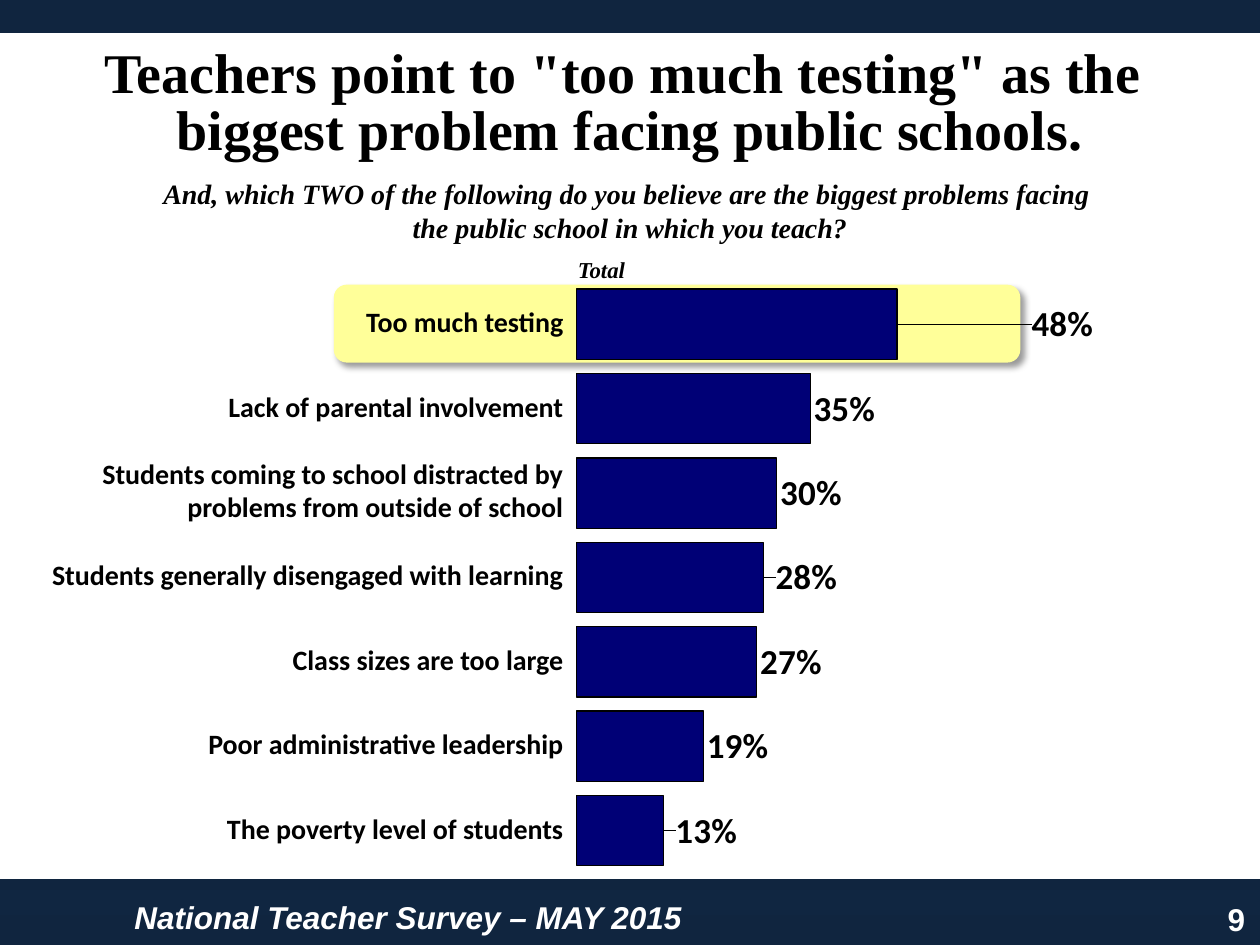
"""Build the survey slide on the biggest problems facing public schools."""
from copy import deepcopy

from lxml.etree import SubElement
from pptx import Presentation
from pptx.chart.data import CategoryChartData
from pptx.dml.color import RGBColor
from pptx.enum.chart import XL_CHART_TYPE, XL_LABEL_POSITION
from pptx.enum.shapes import MSO_SHAPE
from pptx.enum.text import MSO_ANCHOR, MSO_AUTO_SIZE, PP_ALIGN
from pptx.oxml import parse_xml
from pptx.oxml.ns import qn
from pptx.util import Cm, Pt

TITLE = ['Teachers point to "too much testing" as the ',
         "biggest problem facing public schools."]
QUERY = ["And, which TWO of the following do you believe are the biggest problems facing ",
         "the public school in which you teach?"]
FOOTER = "National Teacher Survey – MAY 2015"
PAGE = "9"
# Each row: wording, share, lines of text, label shift as part of chart width
ROWS = [
    ("Too much testing", 0.48, 1, 0.23),
    ("Lack of parental involvement", 0.35, 1, 0.08),
    ("Students coming to school distracted by problems from outside of school", 0.30, 2, 0.08),
    ("Students generally disengaged with learning", 0.28, 1, 0.09),
    ("Class sizes are too large", 0.27, 1, 0.08),
    ("Poor administrative leadership", 0.19, 1, 0.08),
    ("The poverty level of students", 0.13, 1, 0.09),
]

NAVY = RGBColor(0x10, 0x25, 0x3F)
BLUE = RGBColor(0x17, 0x37, 0x5E)
BAR = RGBColor(0x00, 0x00, 0x76)
YELLOW = RGBColor(0xFF, 0xFF, 0x99)
WHITE = RGBColor(0xFF, 0xFF, 0xFF)
BLACK = RGBColor(0x00, 0x00, 0x00)
SERIF = "Times New Roman"

CHART = (7.92, 5.23, 17.65, 12.75)
PLOT = {"x": 0.21, "y": 0.036, "w": 0.762, "h": 0.934}
SHADOW = (
    '<a:effectLst xmlns:a="http://schemas.openxmlformats.org/drawingml/2006/main">'
    '<a:outerShdw blurRad="50800" dist="38100" dir="2700000" algn="tl" rotWithShape="0">'
    '<a:srgbClr val="000000"><a:alpha val="40000"/></a:srgbClr>'
    '</a:outerShdw></a:effectLst>')


def place(shape, box):
    shape.left, shape.top, shape.width, shape.height = map(Cm, box)


def style(font, name, size, color=BLACK, italic=False):
    font.name, font.size = name, Pt(size)
    font.bold, font.italic = True, italic
    font.color.rgb = color


def write(shape, lines, align, look, space=1.0):
    frame = shape.text_frame
    frame.word_wrap = True
    for i, line in enumerate(lines):
        para = frame.paragraphs[0] if i == 0 else frame.add_paragraph()
        para.alignment, para.line_spacing = align, space
        para.space_before = Pt(0)
        run = para.add_run()
        run.text = line
        style(run.font, *look)


def add_text(slide, box, line, align, look):
    shape = slide.shapes.add_textbox(*map(Cm, box))
    shape.text_frame.auto_size = MSO_AUTO_SIZE.SHAPE_TO_FIT_TEXT
    write(shape, [line], align, look)


def add_panel(slide, kind, box, color):
    shape = slide.shapes.add_shape(kind, *map(Cm, box))
    shape.shadow.inherit = False
    shape.fill.solid()
    shape.fill.fore_color.rgb = color
    shape.line.fill.background()
    return shape


def paint_back(slide):
    fill = slide.background.fill
    fill.gradient()
    fill.gradient_angle = 90
    first = fill.gradient_stops[0]._gs
    first.addnext(deepcopy(first))
    for stop, spot, color in zip(fill.gradient_stops, (0, 0.5, 1), (NAVY, BLUE, NAVY)):
        stop.position = spot
        stop.color.rgb = color


def set_layout(parent, index, parts):
    for old in parent.findall(qn("c:layout")):
        parent.remove(old)
    layout = SubElement(parent, qn("c:layout"))
    manual = SubElement(layout, qn("c:manualLayout"))
    for tag, val in parts:
        SubElement(manual, qn(f"c:{tag}")).set("val", str(val))
    parent.insert(index, layout)


def add_bars(slide):
    data = CategoryChartData(number_format="0%")
    data.categories = [str(i + 1) for i in range(len(ROWS))]
    data.add_series("Series 1", [row[1] for row in ROWS])
    chart = slide.shapes.add_chart(
        XL_CHART_TYPE.BAR_STACKED, *map(Cm, CHART), data).chart
    style(chart.font, "Arial", 14)
    chart.has_legend = chart.has_title = False
    cats, vals = chart.category_axis, chart.value_axis
    cats.visible = vals.visible = False
    cats.reverse_order = True
    vals.has_major_gridlines = False
    vals.minimum_scale, vals.maximum_scale = 0, 1
    modes = [("layoutTarget", "inner"), ("xMode", "edge"), ("yMode", "edge")]
    set_layout(chart._chartSpace.chart.plotArea, 0, modes + list(PLOT.items()))

    plot = chart.plots[0]
    plot.gap_width, plot.overlap = 20, 100
    plot.vary_by_categories = False
    bars = plot.series[0]
    bars.format.fill.solid()
    bars.format.fill.fore_color.rgb = BAR
    bars.format.line.color.rgb = BLACK
    bars.format.line.width = Pt(0.75)
    tags = bars.data_labels
    tags.show_value = True
    tags.number_format, tags.number_format_is_linked = "0%", False
    tags.position = XL_LABEL_POSITION.INSIDE_END
    style(tags.font, "Calibri", 20)
    for i, row in enumerate(ROWS):
        tag = bars.points[i].data_label
        style(tag.font, "Calibri", 20)
        tag.position = XL_LABEL_POSITION.INSIDE_END
        set_layout(tag._dLbl, 1, [("x", row[3]), ("y", 0)])


def add_names(slide):
    pitch = CHART[3] * PLOT["h"] / len(ROWS)
    top = CHART[1] + CHART[3] * PLOT["y"]
    for i, (name, _, lines, _) in enumerate(ROWS):
        high = 0.25 + 0.69 * lines
        mid = top + pitch * (i + 0.5) - 0.05
        add_text(slide, (0, mid - high / 2, 11.61, high), name,
                 PP_ALIGN.RIGHT, ("Calibri", 16))


def add_heads(slide):
    title, query = slide.shapes.title, slide.placeholders[1]
    place(title, (0, 0.84, 25.4, 2.59))
    place(query, (0, 3.43, 25.4, 1.63))
    write(title, TITLE, PP_ALIGN.CENTER, (SERIF, 32), 0.85)
    write(query, QUERY, PP_ALIGN.CENTER, (SERIF, 16, BLACK, True))
    for para in query.text_frame.paragraphs:
        props = para._p.get_or_add_pPr()
        props.set("marL", "0")
        props.set("indent", "0")
        SubElement(props, qn("a:buNone"))
    for shape in (title, query):
        shape.text_frame.auto_size = MSO_AUTO_SIZE.NONE
        shape.text_frame.vertical_anchor = MSO_ANCHOR.TOP
        slide.shapes._spTree.append(shape._element)


def main():
    deck = Presentation()
    deck.slide_width, deck.slide_height = Cm(25.4), Cm(19.05)
    slide = deck.slides.add_slide(deck.slide_layouts[1])
    paint_back(slide)
    page = add_panel(slide, MSO_SHAPE.RECTANGLE, (-0.25, 0.56, 25.88, 17.27), WHITE)
    page.line.color.rgb = NAVY
    page.line.width = Pt(6)
    add_text(slide, (22.81, 18.01, 2.54, 1.02), PAGE,
             PP_ALIGN.RIGHT, ("Arial", 18, WHITE))
    add_text(slide, (2.46, 17.98, 19.84, 1.02), FOOTER,
             PP_ALIGN.LEFT, ("Arial", 18, WHITE, True))
    glow = add_panel(slide, MSO_SHAPE.ROUNDED_RECTANGLE, (6.73, 5.74, 13.84, 1.57), YELLOW)
    props = glow._element.spPr
    props.replace(props.find(qn("a:effectLst")), parse_xml(SHADOW))
    add_bars(slide)
    add_names(slide)
    add_text(slide, (11.4, 5.03, 5.66, 0.81), "Total",
             PP_ALIGN.LEFT, (SERIF, 13, BLACK, True))
    add_heads(slide)
    deck.save("out.pptx")


if __name__ == "__main__":
    main()
